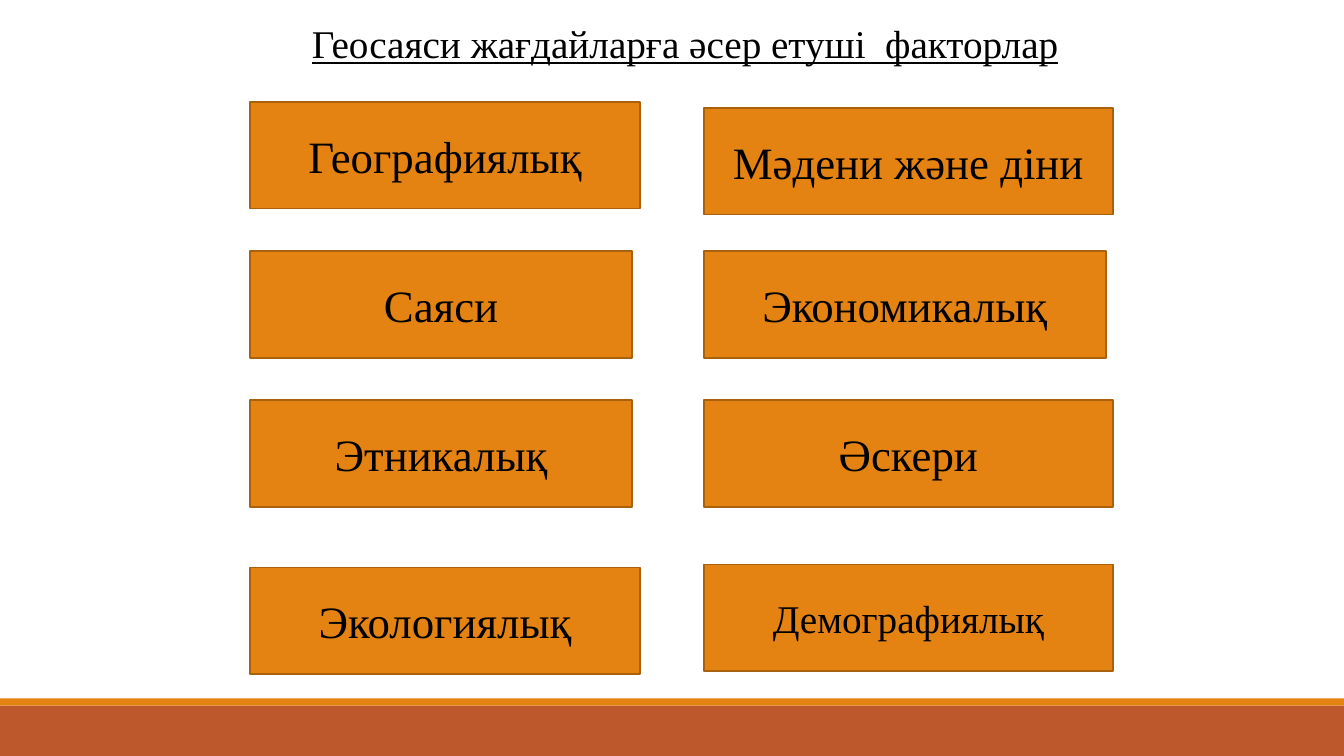
from dataclasses import dataclass

import pptx
import pptx.dml.color
import pptx.enum.shapes
import pptx.enum.text
import pptx.util

Inches = pptx.util.Inches
ORANGE, RUST, BROWN, BLACK = "E48312", "BD582C", "A9610D", "000000"
LEFT_COLUMN, RIGHT_COLUMN = 2.48, 6.98
FACTOR_HEIGHT = 1.06


@dataclass
class Factor:
    label: str
    left: float
    top: float
    width: float
    size: int = 32


FACTORS = [
    Factor("Географиялық", LEFT_COLUMN, 1.01, 3.87),
    Factor("Саяси", LEFT_COLUMN, 2.49, 3.79),
    Factor("Мәдени және діни", RIGHT_COLUMN, 1.07, 4.06),
    Factor("Этникалық", LEFT_COLUMN, 3.97, 3.79),
    Factor("Әскери", RIGHT_COLUMN, 3.97, 4.06),
    Factor("Экономикалық", RIGHT_COLUMN, 2.49, 3.99),
    Factor("Экологиялық", LEFT_COLUMN, 5.63, 3.87),
    Factor("Демографиялық", RIGHT_COLUMN, 5.6, 4.06, size=28),
]


def color(value: str) -> pptx.dml.color.RGBColor:
    return pptx.dml.color.RGBColor.from_string(value)


def add_rectangle(page, left: float, top: float, width: float, height: float, fill: str):
    """Add a flat rectangle without an outline."""
    box = page.shapes.add_shape(
        pptx.enum.shapes.MSO_SHAPE.RECTANGLE,
        Inches(left), Inches(top), Inches(width), Inches(height),
    )
    box.shadow.inherit = False
    box.fill.solid()
    box.fill.fore_color.rgb = color(fill)
    box.line.fill.background()
    return box


def write_text(box, text: str, size: int, underline: bool = False) -> None:
    box.text_frame.word_wrap = True
    para = box.text_frame.paragraphs[0]
    para.alignment = pptx.enum.text.PP_ALIGN.CENTER
    span = para.add_run()
    span.text = text
    formats = {
        "name": "Times New Roman",
        "size": pptx.util.Pt(size),
        "underline": underline,
    }
    for name, value in formats.items():
        setattr(span.font, name, value)
    span.font.color.rgb = color(BLACK)


def add_factor(page, factor: Factor) -> None:
    box = add_rectangle(
        page, factor.left, factor.top, factor.width, FACTOR_HEIGHT, ORANGE
    )
    box.line.color.rgb = color(BROWN)
    box.line.width = pptx.util.Pt(1.25)
    box.text_frame.vertical_anchor = pptx.enum.text.MSO_ANCHOR.MIDDLE
    write_text(box, factor.label, factor.size)


def main() -> None:
    deck = pptx.Presentation()
    deck.slide_width, deck.slide_height = Inches(13.33), Inches(7.5)
    page = deck.slides.add_slide(deck.slide_layouts[6])

    add_rectangle(page, 0, 7, 13.33, 0.5, RUST)
    add_rectangle(page, 0, 6.93, 13.33, 0.07, ORANGE)

    title = page.shapes.add_textbox(
        Inches(2.34), Inches(0.14), Inches(8.91), Inches(0.57)
    )
    write_text(title, "Геосаяси жағдайларға әсер етуші  факторлар", 28, underline=True)
    title.text_frame.auto_size = pptx.enum.text.MSO_AUTO_SIZE.SHAPE_TO_FIT_TEXT

    for factor in FACTORS:
        add_factor(page, factor)

    deck.save("out.pptx")


if __name__ == "__main__":
    main()
